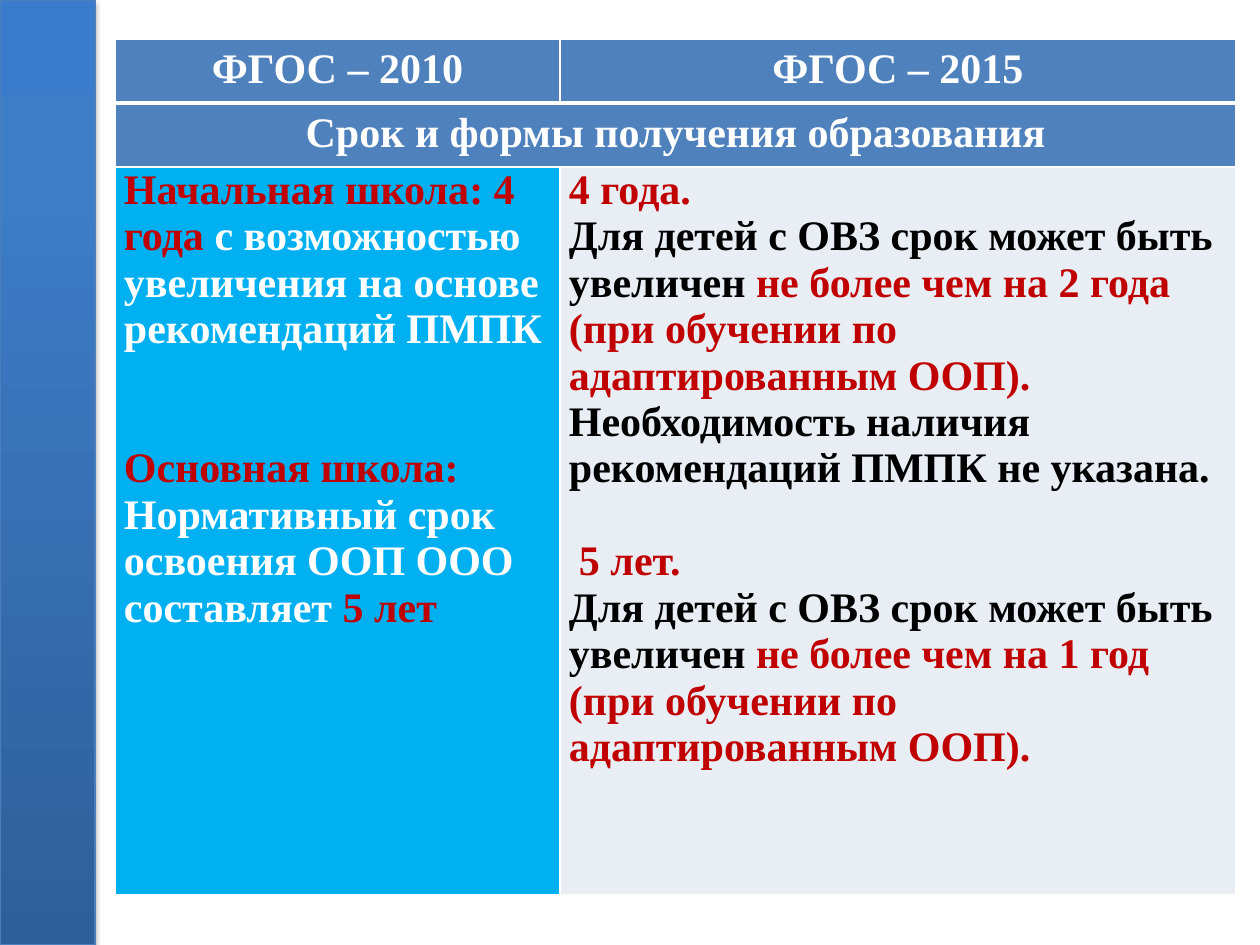
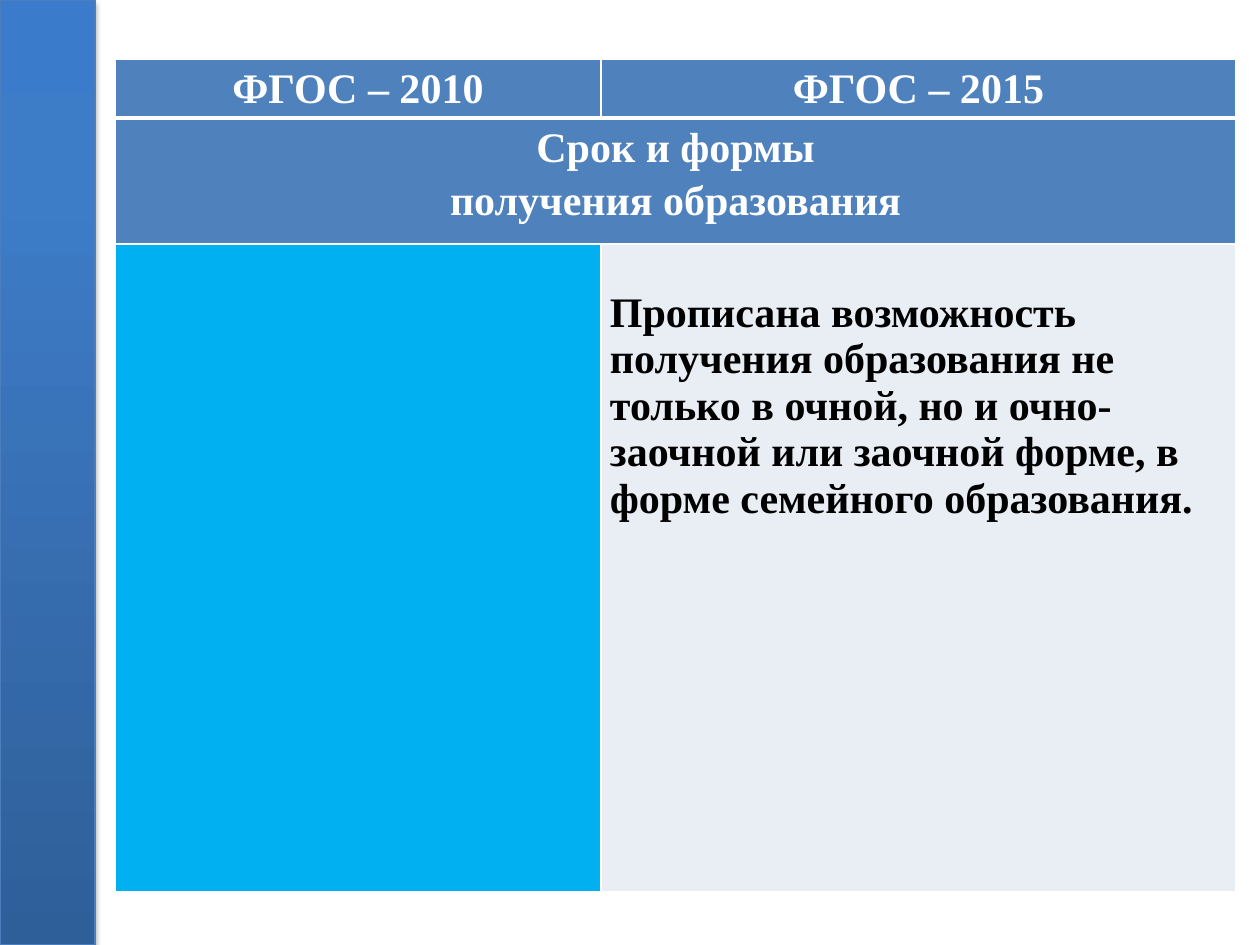
from dataclasses import dataclass

from lxml import etree
from pptx import Presentation
from pptx.dml.color import RGBColor
from pptx.enum.shapes import MSO_SHAPE as Shape
from pptx.enum.text import PP_ALIGN as Align
from pptx.oxml import parse_xml
from pptx.oxml.ns import nsdecls, qn
from pptx.util import Emu, Pt

PX = 914400 / 126


@dataclass(frozen=True)
class Theme:
    font: str = "Times New Roman"
    size: int = 24
    header_spacing: float = 1.15
    white: str = "FFFFFF"
    black: str = "000000"
    red: str = "C00000"
    header: str = "4F81BD"
    old: str = "00B0F0"
    new: str = "E9EDF4"
    band_line: str = "4B7EBC"
    band_stops: tuple = ((0, "2F5F99"), (80, "3D7CC7"), (100, "3A7CCB"))
    blank_line: float = 26.5


THEME = Theme()


@dataclass(frozen=True)
class Para:
    spans: tuple
    before: float = 0
    indent: int = 0


def px(value):
    return Emu(round(value * PX))


def rgb(value):
    return RGBColor.from_string(value)


# Side band
def add_band(page):
    band = page.shapes.add_shape(Shape.RECTANGLE, 0, 0, px(95), px(945))
    band.fill.gradient()
    band.fill.gradient_angle = 90
    stops = band.element.spPr.find(qn("a:gradFill")).find(qn("a:gsLst"))
    stops.clear()
    for position, color in THEME.band_stops:
        stop = etree.SubElement(stops, qn("a:gs"), pos=str(position * 1000))
        etree.SubElement(stop, qn("a:srgbClr"), val=color)
    band.line.color.rgb = rgb(THEME.band_line)
    band.line.width = Pt(0.75)
    band.element.spPr.append(parse_xml(
        f'<a:effectLst {nsdecls("a")}>'
        f'<a:outerShdw blurRad="{Pt(3.1)}" dist="{Pt(1.8)}" dir="5400000" rotWithShape="0">'
        f'<a:srgbClr val="{THEME.black}"><a:alpha val="35000"/></a:srgbClr>'
        '</a:outerShdw></a:effectLst>'))


# Table cells
def style_cell(cell, color, bottom=1, margin_top=0):
    properties = cell._tc.get_or_add_tcPr()
    for side, width in (("L", 1), ("R", 1), ("T", 1), ("B", bottom)):
        properties.append(parse_xml(
            f'<a:ln{side} {nsdecls("a")} w="{Pt(width)}"><a:solidFill>'
            f'<a:srgbClr val="{THEME.white}"/></a:solidFill></a:ln{side}>'))
    cell.fill.solid()
    cell.fill.fore_color.rgb = rgb(color)
    cell.margin_left = cell.margin_right = px(9)
    cell.margin_top, cell.margin_bottom = px(margin_top), 0


def write_cell(cell, paras, header=False):
    frame = cell.text_frame
    for index, para in enumerate(paras):
        paragraph = frame.add_paragraph() if index else frame.paragraphs[0]
        if header:
            paragraph.alignment = Align.CENTER
            paragraph.line_spacing = THEME.header_spacing
        if para.before:
            paragraph.space_before = Pt(para.before)
        if para.indent:
            paragraph._p.get_or_add_pPr().set("marL", str(px(para.indent)))
        for text, color in para.spans:
            span = paragraph.add_run()
            span.text = text
            font = span.font
            font.name, font.size, font.bold = THEME.font, Pt(THEME.size), True
            font.color.rgb = rgb(color)


def header_para(text):
    return Para(((text, THEME.white),))


# Comparison of the two standards
def add_comparison(page, top, columns, rows, topic, old, new, new_margin=0):
    frame = page.shapes.add_table(3, 2, px(115), px(top), px(sum(columns)), px(sum(rows)))
    table = frame.table
    for column, width in zip(table.columns, columns):
        column.width = px(width)
    for row, height in zip(table.rows, rows):
        row.height = px(height)

    for index, year in enumerate((2010, 2015)):
        cell = table.cell(0, index)
        style_cell(cell, THEME.header, bottom=3)
        write_cell(cell, [header_para(f"ФГОС – {year}")], header=True)
        style_cell(table.cell(1, index), THEME.header)

    table.cell(1, 0).merge(table.cell(1, 1))
    write_cell(table.cell(1, 0), [header_para(line) for line in topic], header=True)

    style_cell(table.cell(2, 0), THEME.old)
    write_cell(table.cell(2, 0), old)
    style_cell(table.cell(2, 1), THEME.new, margin_top=new_margin)
    write_cell(table.cell(2, 1), new)


def add_page(deck):
    page = deck.slides.add_slide(deck.slide_layouts[6])
    add_band(page)
    return page


def main():
    deck = Presentation()
    deck.slide_width, deck.slide_height = px(1260), px(945)
    white, black, red = THEME.white, THEME.black, THEME.red
    longer = ("Для детей с ОВЗ срок может быть увеличен ", black)
    adapted = "(при обучении по адаптированным ООП)."

    # Slide 1: length of study
    add_comparison(
        add_page(deck), 39, (445, 676), (64, 64, 728),
        ["Срок и формы получения образования"],
        old=[
            Para((("Начальная школа: 4 года ", red),
                  ("с возможностью увеличения на основе рекомендаций ПМПК", white))),
            Para((("Основная школа:", red),), before=2 * THEME.blank_line),
            Para((("Нормативный срок освоения ООП ООО составляет ", white),
                  ("5 лет", red))),
        ],
        new=[
            Para((("4 года.", red),)),
            Para((longer, (f"не более чем на 2 года {adapted}", red))),
            Para((("Необходимость наличия рекомендаций ПМПК не указана.", black),)),
            Para((("5 лет.", red),), before=THEME.blank_line, indent=10),
            Para((longer, ("не более чем на 1 год", red))),
            Para(((adapted, red),)),
        ])

    # Slide 2: forms of study
    add_comparison(
        add_page(deck), 59, (486, 635), (59, 126, 648),
        ["Срок и формы", "получения образования"],
        old=[],
        new=[Para((("Прописана возможность получения образования не только в очной, "
                    "но и очно-заочной или заочной форме, в форме семейного образования.",
                    black),))],
        new_margin=46)

    deck.save("out.pptx")


if __name__ == "__main__":
    main()
